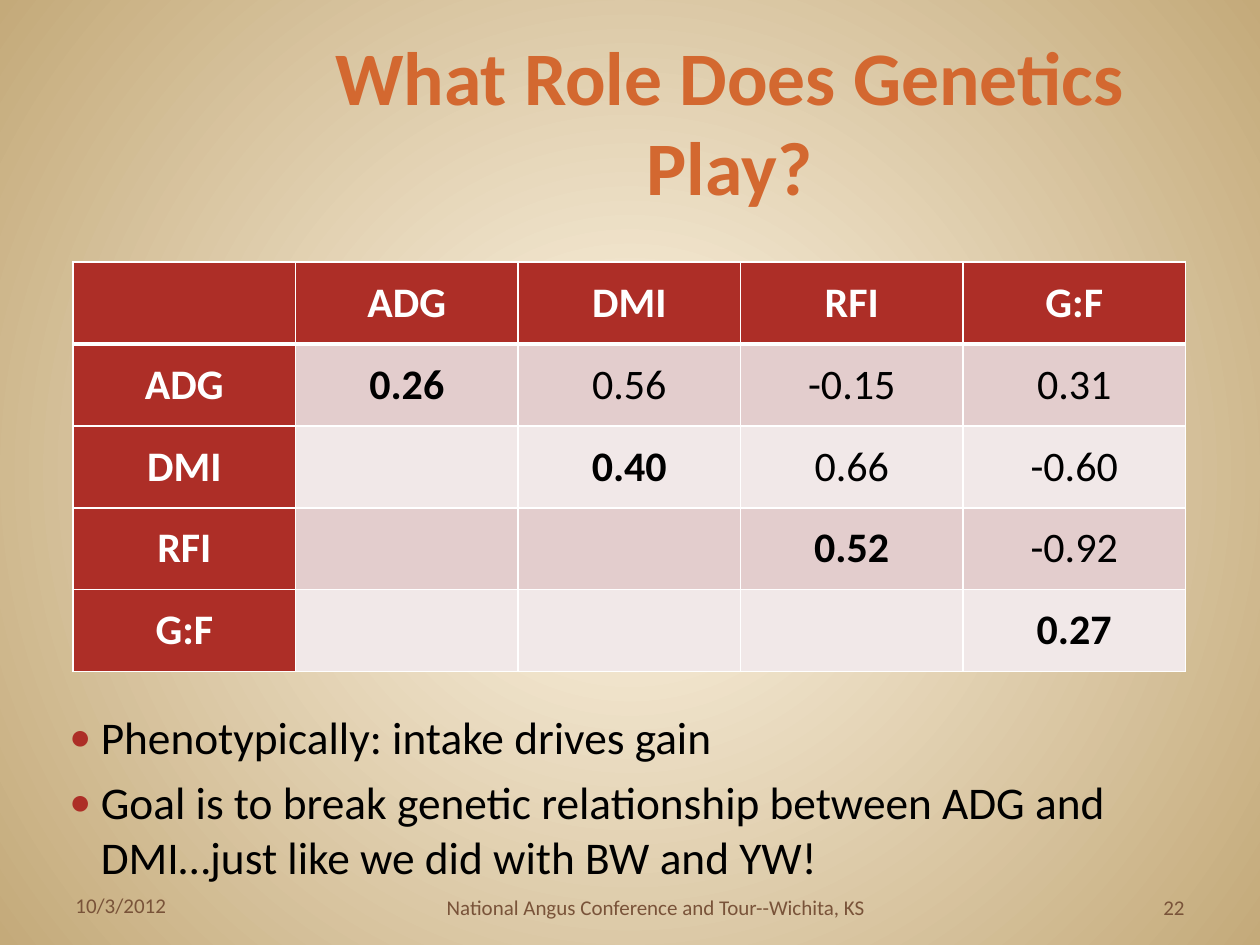
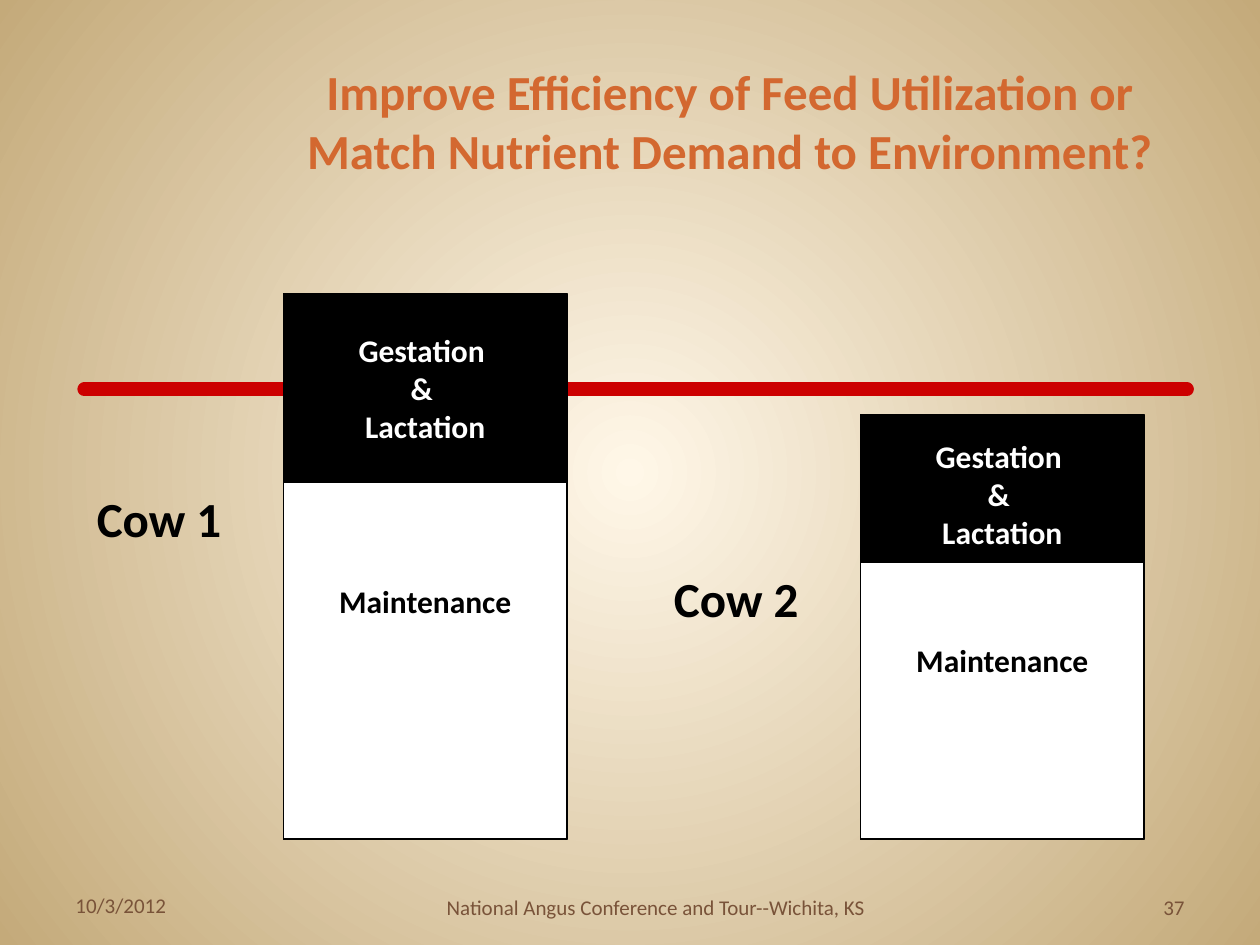
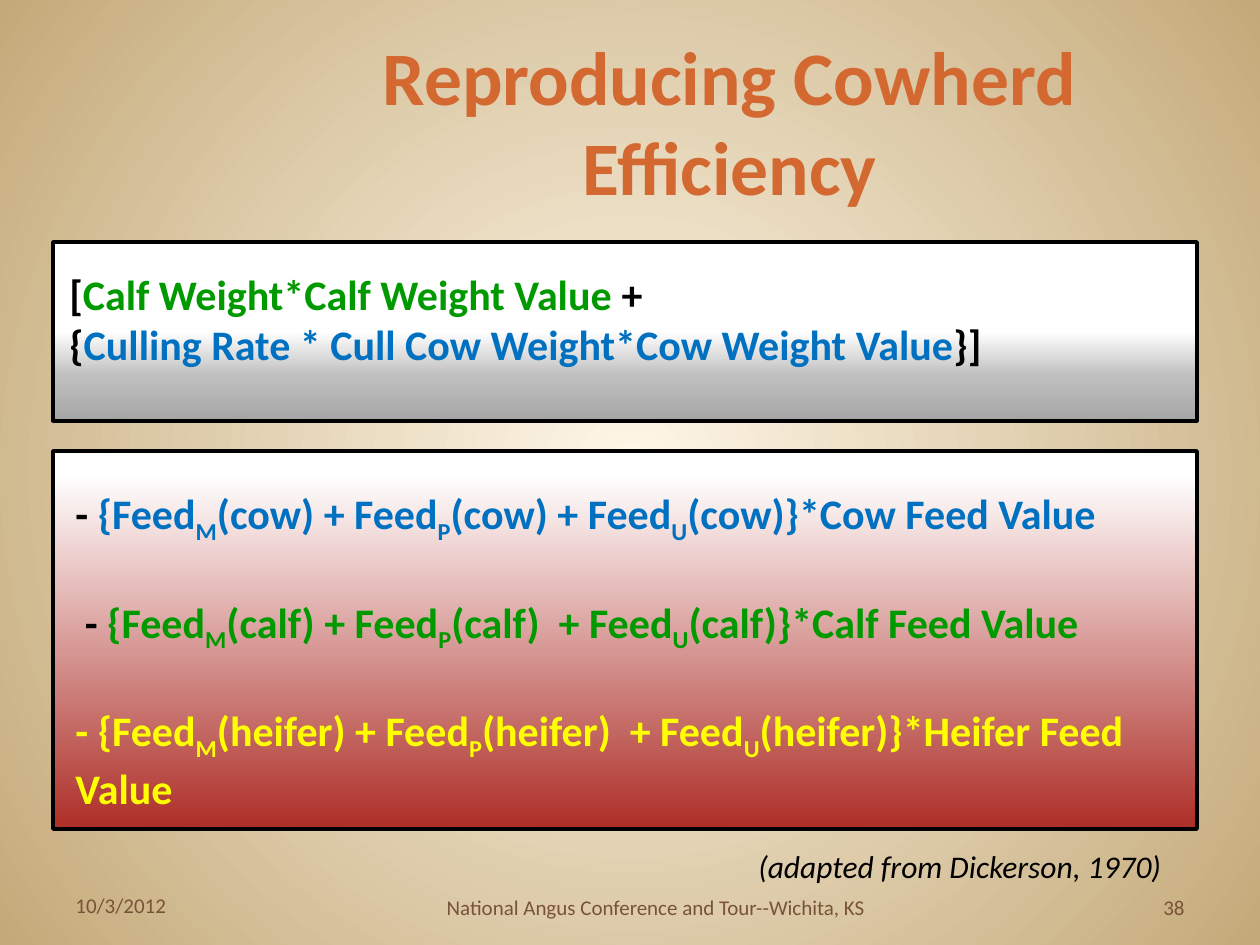
from pptx import Presentation
from pptx.dml.color import RGBColor
from pptx.enum.shapes import MSO_CONNECTOR as Connector, MSO_SHAPE as Preset
from pptx.enum.text import MSO_ANCHOR as Anchor, MSO_AUTO_SIZE as AutoSize, PP_ALIGN as Align
from pptx.oxml import parse_xml
from pptx.oxml.ns import nsdecls
from pptx.util import Inches, Pt

COLORS = {
    "cream": "FFF7E8", "tan": "C4AA7A", "orange": "D36830", "brown": "795339",
    "brick": "AD2E27", "rose": "E3CDCD", "blush": "F1E8E8", "red": "CC0000",
    "black": "000000", "white": "FFFFFF", "silver": "BFBFBF", "gray": "A6A6A6",
    "green": "009900", "blue": "0070C0", "yellow": "FFFF00",
}
RGB = {name: RGBColor.from_string(value) for name, value in COLORS.items()}
DOWN = '<a:lin ang="5400000" scaled="0"/>'
FROM_CENTER = ('<a:path path="circle"><a:fillToRect l="50000" t="50000" '
               'r="50000" b="50000"/></a:path>')


def write(para, spans, look):
    """Add (text, format changes) spans to a paragraph; "\\n" breaks the line."""
    for text, changes in spans:
        if text == "\n":
            para.add_line_break()
            continue
        span = para.add_run()
        span.text = text
        for name, value in {"name": "Calibri", "color": "black", **look, **changes}.items():
            if name == "color":
                span.font.color.rgb = RGB[value]
            elif name == "baseline":
                span.font._element.set("baseline", str(value * 1000))
            else:
                setattr(span.font, name, value)


def set_gradient(owner, fill, stops, direction):
    """Fill the owner with (percent, color) stops."""
    fill.gradient()
    old = owner.element.xpath(".//a:gradFill")[0]
    stop_xml = "".join(f'<a:gs pos="{percent * 1000}"><a:srgbClr val="{COLORS[color]}"/></a:gs>'
                       for percent, color in stops)
    old.getparent().replace(old, parse_xml(
        f'<a:gradFill {nsdecls("a")} rotWithShape="1"><a:gsLst>{stop_xml}</a:gsLst>'
        f'{direction}</a:gradFill>'))


deck = Presentation()
deck.slide_width, deck.slide_height = Inches(10), Inches(7.5)
master = deck.slide_master
set_gradient(master, master.background.fill, [(0, "cream"), (100, "tan")], FROM_CENTER)

# Titles and footers; every text box is listed in labels and drawn at the end
labels = []
pages = []
for layout, title, size, number in [
    (1, "What Role Does Genetics Play?", 43.2, "22"),
    (5, "Improve Efficiency of Feed Utilization or Match Nutrient Demand to Environment?",
     28, "37"),
    (1, "Reproducing Cowherd Efficiency", 43.2, "38"),
]:
    page = deck.slides.add_slide(deck.slide_layouts[layout])
    pages.append(page)
    heading = page.shapes.title
    heading.left, heading.top, heading.width, heading.height = map(
        Inches, (2.08, 0.33, 7.42, 1.25))
    frame = heading.text_frame
    frame.auto_size, frame.vertical_anchor = AutoSize.NONE, Anchor.MIDDLE
    frame.paragraphs[0].alignment = Align.CENTER
    write(frame.paragraphs[0], [(title, {})],
          {"size": Pt(size), "bold": True, "color": "orange"})
    for box, text, align in [
        ((0.5, 7.08, 1.08, 0.25), "10/3/2012", Align.LEFT),
        ((1.58, 7.08, 7.25, 0.27), "National Angus Conference and Tour--Wichita, KS",
         Align.CENTER),
        ((9, 7.08, 0.5, 0.27), number, Align.RIGHT),
    ]:
        labels.append((page, box, [[(text, {})]], align, Anchor.BOTTOM,
                       {"size": Pt(12), "color": "brown"}))
genetics, cows, efficiency = pages

# Body lists
bold_24 = {"size": Pt(24), "bold": True}
for page, box, items, look, bulleted in [
    (genetics, (0.5, 5.58, 9, 1.42), [
        [("Phenotypically: intake drives gain", {})],
        [("Goal is to break genetic relationship between ADG and DMI…"
          "just like we did with BW and YW!", {})],
    ], {"size": Pt(25.9)}, True),
    (efficiency, (0.5, 2.08, 9, 1.08), [[
        ("[", {}), ("Calf Weight*Calf Weight Value ", {"color": "green"}),
        ("+ ", {}), ("\n", {}), ("{", {}),
        ("Culling Rate * Cull Cow Weight*Cow Weight Value", {"color": "blue"}),
        ("}]", {}),
    ]], bold_24, False),
]:
    body = page.placeholders[1]
    body.left, body.top, body.width, body.height = map(Inches, box)
    frame = body.text_frame
    frame.auto_size = AutoSize.NONE
    for side in ("left", "top", "right", "bottom"):
        setattr(frame, f"margin_{side}", Inches(0.05))
    for index, spans in enumerate(items):
        para = frame.add_paragraph() if index else frame.paragraphs[0]
        para.space_before, para.space_after = Pt(0), Pt(6)
        indent = Inches(0.25) if bulleted else 0
        properties = para._p.get_or_add_pPr()
        properties.set("marL", str(indent))
        properties.set("indent", str(-indent))
        bullet = ([f'<a:buClr {nsdecls("a")}><a:srgbClr val="{COLORS["brick"]}"/></a:buClr>',
                   f'<a:buSzPct {nsdecls("a")} val="80000"/>',
                   f'<a:buChar {nsdecls("a")} char="●"/>']
                  if bulleted else [f'<a:buNone {nsdecls("a")}/>'])
        for part in bullet:
            properties.append(parse_xml(part))
        write(para, spans, look)

# Genetic correlation table, heritabilities on the diagonal
traits = ["ADG", "DMI", "RFI", "G:F"]
rows = [
    [""] + traits,
    ["ADG", "0.26", "0.56", "-0.15", "0.31"],
    ["DMI", "", "0.40", "0.66", "-0.60"],
    ["RFI", "", "", "0.52", "-0.92"],
    ["G:F", "", "", "", "0.27"],
]
table = genetics.shapes.add_table(5, 5, Inches(0.58), Inches(2.08),
                                  Inches(8.83), Inches(3.25)).table
for r, values in enumerate(rows):
    table.rows[r].height = Inches(0.65)
    for c, value in enumerate(values):
        cell = table.cell(r, c)
        cell.vertical_anchor = Anchor.MIDDLE
        is_header = r == 0 or c == 0
        for side in "LRTB":
            thick = (r, side) in [(0, "B"), (1, "T")]
            cell._tc.get_or_add_tcPr().append(parse_xml(
                f'<a:ln{side} {nsdecls("a")} w="{Pt(3 if thick else 1)}"><a:solidFill>'
                f'<a:srgbClr val="{COLORS["white"]}"/></a:solidFill></a:ln{side}>'))
        cell.fill.solid()
        cell.fill.fore_color.rgb = RGB["brick" if is_header else "rose" if r % 2 else "blush"]
        para = cell.text_frame.paragraphs[0]
        para.alignment = Align.CENTER
        if value:
            write(para, [(value, {})], {"size": Pt(24), "bold": is_header or r == c,
                                        "color": "white" if is_header else "black"})

# Nutrient supply line
supply = cows.shapes.add_connector(Connector.STRAIGHT, Inches(0.67), Inches(3.09),
                                   Inches(9.42), Inches(3.09))
supply.line.color.rgb, supply.line.width = RGB["red"], Pt(8)
supply.line._get_or_add_ln().set("cap", "rnd")
supply.element.spPr.append(parse_xml(f'<a:effectLst {nsdecls("a")}/>'))

# Stacked nutrient demand of each cow
base = 6.66
bold_18 = {"size": Pt(18), "bold": True}
for name, left, top, split, demand_top, maintenance_top in [
    ("Cow 1", 2.25, 2.33, 3.83, 2.58, 4.57),
    ("Cow 2", 6.83, 3.29, 4.46, 3.42, 5.04),
]:
    for bar_top, color in [(top, "black"), (split, "white")]:
        bar = cows.shapes.add_shape(Preset.RECTANGLE, Inches(left), Inches(bar_top),
                                    Inches(2.25), Inches(base - bar_top))
        bar.shadow.inherit = False
        bar.fill.solid()
        bar.fill.fore_color.rgb = RGB[color]
        bar.line.color.rgb, bar.line.width = RGB["black"], Pt(1)
    labels += [
        (cows, (left - 1.58, split, 1.42, 0.57), [[(name, {})]], Align.LEFT, Anchor.TOP,
         {"size": Pt(28), "bold": True}),
        (cows, (left + 0.25, demand_top, 1.75, 1.01),
         [[("Gestation ", {}), ("\n", {}), ("& ", {}), ("\n", {}), ("Lactation", {})]],
         Align.CENTER, Anchor.TOP, {**bold_18, "color": "white"}),
        (cows, (left + 0.25, maintenance_top, 1.75, 0.4), [[("Maintenance", {})]],
         Align.CENTER, Anchor.TOP, bold_18),
    ]

# Panels behind the efficiency formula
for top, height, stops in [
    (1.92, 1.42, [(50, "white"), (75, "silver"), (100, "gray")]),
    (3.58, 3, [(6, "white"), (100, "brick")]),
]:
    panel = efficiency.shapes.add_shape(Preset.RECTANGLE, Inches(0.42), Inches(top),
                                        Inches(9.08), Inches(height))
    panel.shadow.inherit = False
    set_gradient(panel, panel.fill, stops, DOWN)
    panel.line.color.rgb, panel.line.width = RGB["black"], Pt(2)
    efficiency.shapes._spTree.insert(2, panel.element)

# Feed costs, one line per animal
feed_lines = []
for animal, dash, dash_color, color, last_plus in [
    ("cow", "- ", "black", "blue", " + "),
    ("calf", " - ", "black", "green", "  + "),
    ("heifer", "- ", "yellow", "yellow", "  + "),
]:
    spans = [(dash, {"color": dash_color})]
    for lead, use in [("{", "M"), (f"({animal}) + ", "P"), (f"({animal}){last_plus}", "U")]:
        spans += [(lead + "Feed", {"color": color}), (use, {"color": color, "baseline": -25})]
    spans.append((f"({animal})}}*{animal.title()} Feed Value", {"color": color}))
    feed_lines.append(spans)
labels += [
    (efficiency, (0.5, 3.82, 8.92, 2.93), feed_lines, Align.LEFT, Anchor.TOP, bold_24),
    (efficiency, (5.92, 6.67, 3.56, 0.4), [[("(adapted from Dickerson, 1970)", {})]],
     Align.LEFT, Anchor.TOP, {"size": Pt(18), "italic": True}),
]

# Text boxes
for page, box, lines, align, anchor, look in labels:
    frame = page.shapes.add_textbox(*map(Inches, box)).text_frame
    frame.word_wrap, frame.vertical_anchor = True, anchor
    for index, spans in enumerate(lines):
        para = frame.add_paragraph() if index else frame.paragraphs[0]
        para.alignment = align
        if index:
            para.space_before = Pt(29.3)
        write(para, spans, look)

deck.save("out.pptx")
